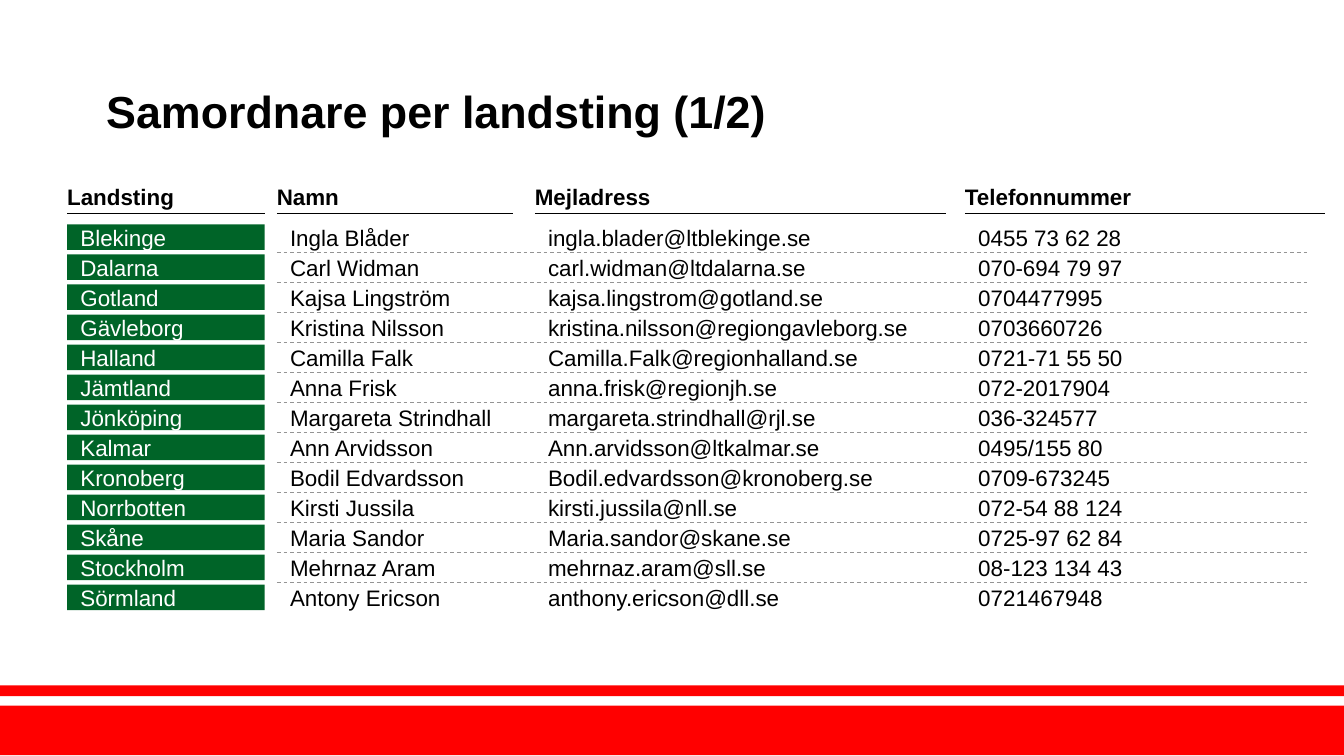
from lxml import etree
from pptx import Presentation
from pptx import util as u
from pptx.dml.color import RGBColor
from pptx.enum import dml, shapes, text
from pptx.oxml import ns

TITLE = "Samordnare per landsting (1/2)"
HEADS = [
    ("Landsting", 0.5, 1.47),
    ("Namn", 2.06, 1.76),
    ("Mejladress", 3.98, 3.06),
    ("Telefonnummer", 7.18, 2.68),
]
ROWS = [
    ("Blekinge", "Ingla Blåder", "ingla.blader@ltblekinge.se", "0455 73 62 28"),
    ("Dalarna", "Carl Widman", "carl.widman@ltdalarna.se", "070-694 79 97"),
    ("Gotland", "Kajsa Lingström", "kajsa.lingstrom@gotland.se", "0704477995"),
    ("Gävleborg", "Kristina Nilsson", "kristina.nilsson@regiongavleborg.se", "0703660726"),
    ("Halland", "Camilla Falk", "Camilla.Falk@regionhalland.se", "0721-71 55 50"),
    ("Jämtland", "Anna Frisk", "anna.frisk@regionjh.se", "072-2017904"),
    ("Jönköping", "Margareta Strindhall", "margareta.strindhall@rjl.se", "036-324577"),
    ("Kalmar", "Ann Arvidsson", "Ann.arvidsson@ltkalmar.se", "0495/155 80"),
    ("Kronoberg", "Bodil Edvardsson", "Bodil.edvardsson@kronoberg.se", "0709-673245"),
    ("Norrbotten", "Kirsti Jussila", "kirsti.jussila@nll.se", "072-54 88 124"),
    ("Skåne", "Maria Sandor", "Maria.sandor@skane.se", "0725-97 62 84"),
    ("Stockholm", "Mehrnaz Aram", "mehrnaz.aram@sll.se", "08-123 134 43"),
    ("Sörmland", "Antony Ericson", "anthony.ericson@dll.se", "0721467948"),
]
BARS = [(5.25, 0.37), (5.1, 0.08)]

BLACK = RGBColor(0, 0, 0)
WHITE = RGBColor(255, 255, 255)
RED = RGBColor(255, 0, 0)
GREEN = RGBColor(0, 100, 40)
GREY = RGBColor(148, 148, 148)

WIDE = 10
HIGH = WIDE * 9 / 16
TOP, LAST, TALL = 1.67, 4.35, 0.19
STEP = (LAST - TOP) / (len(ROWS) - 1)
RULE_X, RULE_END, RULE_DROP = 2.06, 9.73, 0.21

MID = {"vertical_anchor": text.MSO_ANCHOR.MIDDLE, "word_wrap": True,
       "auto_size": text.MSO_AUTO_SIZE.NONE}
HEAD = {"vertical_anchor": text.MSO_ANCHOR.BOTTOM, "word_wrap": True,
        "auto_size": text.MSO_AUTO_SIZE.SHAPE_TO_FIT_TEXT,
        "margin_left": 0, "margin_right": 0, "margin_top": 0, "margin_bottom": 0}


def apply(item, form):
    for key, value in form.items():
        setattr(item, key, value)


def place(x, y, w, h):
    return [u.Inches(n) for n in (x, y, w, h)]


def write(shape, words, frame, color=BLACK, size=12, bold=False):
    apply(shape.text_frame, frame)
    para = shape.text_frame.paragraphs[0]
    para.alignment = text.PP_ALIGN.LEFT
    run = para.add_run()
    run.text = words
    apply(run.font, {"name": "Arial", "size": u.Pt(size), "bold": bold})
    run.font.color.rgb = color
    return para


def block(tree, box, color):
    shape = tree.add_shape(shapes.MSO_SHAPE.RECTANGLE, *place(*box))
    shape.shadow.inherit = False
    shape.fill.solid()
    shape.fill.fore_color.rgb = color
    shape.line.fill.background()
    return shape


def rule(tree, x, end, y, color, width, dash=None):
    line = tree.add_connector(
        shapes.MSO_CONNECTOR.STRAIGHT, *place(x, y, end, y))
    line.line.color.rgb = color
    apply(line.line, {"width": u.Pt(width), "dash_style": dash})
    etree.SubElement(line._element.spPr, ns.qn("a:effectLst"))


def main():
    deck = Presentation()
    apply(deck, {"slide_width": u.Inches(WIDE), "slide_height": u.Inches(HIGH)})
    slide = deck.slides.add_slide(deck.slide_layouts[5])
    tree = slide.shapes

    for y, h in BARS:
        block(tree, (0, y, WIDE, h), RED)

    title = tree.title
    apply(title, dict(zip(("left", "top", "width", "height"),
                          place(0.69, 0.3, 8.62, 1.09))))
    write(title, TITLE, MID, size=24, bold=True).line_spacing = 0.9

    for i in range(len(ROWS) - 1):
        rule(tree, RULE_X, RULE_END, TOP + i * STEP + RULE_DROP,
             GREY, 0.5, dml.MSO_LINE.DASH)

    for col, (name, x, w) in enumerate(HEADS):
        group = tree.add_group_shape().shapes if col else tree
        head = group.add_textbox(*place(x, 1.36, w, 0.2))
        write(head, name, HEAD, bold=True)
        rule(group, x, x + w, 1.59, BLACK, 0.75)
        for i, row in enumerate(ROWS):
            box = (x, TOP + i * STEP, w, TALL)
            if col:
                write(group.add_textbox(*place(*box)), row[col], MID)
            else:
                write(block(group, box, GREEN), row[col], MID, WHITE)

    deck.save("out.pptx")


if __name__ == "__main__":
    main()
